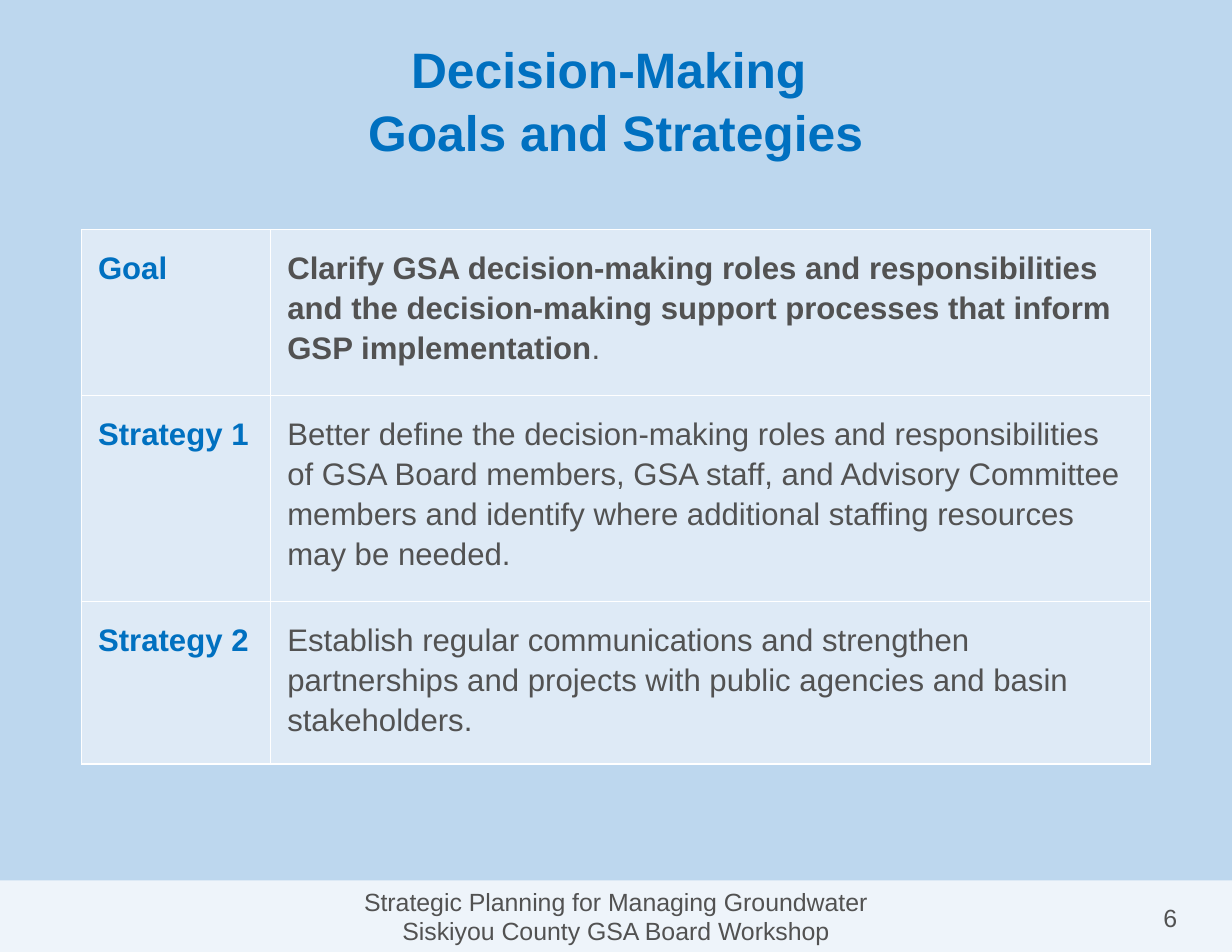
from pptx import Presentation, util as u
from pptx.dml.color import RGBColor
from pptx.enum import shapes, text
from pptx.oxml import parse_xml
from pptx.oxml.ns import nsdecls

COLUMNS, ROWS = 110, 85
BLUE, GREY, PANEL, SKY, WHITE = "0070C0", "525252", "DEEAF6", "BDD7EE", "FFFFFF"

deck = Presentation()
deck.slide_width, deck.slide_height = u.Inches(11), u.Inches(8.5)
unit = deck.slide_width // COLUMNS


def paint(fill, color):
    fill.solid()
    fill.fore_color.rgb = RGBColor.from_string(color)


def write(frame, paragraphs, size, color, align, spacing, frame_format):
    for name, value in {"word_wrap": True, **frame_format}.items():
        setattr(frame, name, value)
    for number, runs in enumerate(paragraphs):
        paragraph = frame.add_paragraph() if number else frame.paragraphs[0]
        for name, value in {"alignment": align, "line_spacing": spacing}.items():
            setattr(paragraph, name, value)
        for words, bold in runs:
            for part, line in enumerate(words.split("\n")):
                if part:
                    paragraph.add_line_break()
                run = paragraph.add_run()
                run.text = line
                font_format = {"name": "Arial", "size": u.Pt(size), "bold": bold}
                for name, value in font_format.items():
                    setattr(run.font, name, value)
                paint(run.font.fill, color)


slide = deck.slides.add_slide(deck.slide_layouts[6])
paint(slide.background.fill, SKY)
center, left = text.PP_ALIGN.CENTER, text.PP_ALIGN.LEFT
middle = {"vertical_anchor": text.MSO_ANCHOR.MIDDLE}

title = slide.shapes.add_textbox(*[int(n * unit) for n in (5.5, 3.4, 99, 10.8)])
write(title.text_frame, [[("Decision-Making \nGoals and Strategies", True)]],
      32, BLUE, center, 1.05, middle)

footer = slide.shapes.add_shape(
    shapes.MSO_SHAPE.RECTANGLE,
    *[int(n * unit) for n in (0, 78.6, COLUMNS, ROWS - 78.6)])
footer.shadow.inherit = False
footer.line.fill.background()
paint(footer.fill, WHITE)
footer.fill._xPr.solidFill[0].append(
    parse_xml(f'<a:alpha {nsdecls("a")} val="75000"/>'))
write(footer.text_frame,
      [[("Strategic Planning for Managing Groundwater", False)],
       [("Siskiyou County GSA Board Workshop", False)]],
      16, GREY, center, 1.0, middle)

page_number = slide.shapes.add_textbox(*[int(n * unit) for n in (101, 80.1, 7, 3.7)])
write(page_number.text_frame, [[("6", False)]], 16, GREY, center, 1.0, {})

plan = [
    ("Goal", 14.8, [
        ("Clarify GSA decision-making roles and responsibilities and the "
         "decision-making support processes that inform GSP implementation", True),
        (".", False)]),
    ("Strategy 1", 18.4, [
        ("Better define the decision-making roles and responsibilities of GSA Board "
         "members, GSA staff, and Advisory Committee members and identify where "
         "additional staffing resources may be needed.", False)]),
    ("Strategy 2", 14.4, [
        ("Establish regular communications and strengthen partnerships and projects "
         "with public agencies and basin stakeholders.", False)]),
]
widths = (16.9, 78.6)
height = sum(rows for _, rows, _ in plan)
goals = slide.shapes.add_table(
    len(plan), len(widths),
    *[int(n * unit) for n in (7.25, 20.5, sum(widths), height)]).table
for column, width in zip(goals.columns, widths):
    column.width = int(width * unit)

inset = int(1.5 * unit)
margins = {f"margin_{side}": inset for side in ("left", "right", "top", "bottom")}
for row, (label, rows, statement) in zip(goals.rows, plan):
    row.height = int(rows * unit)
    contents = (([(label, True)], BLUE), (statement, GREY))
    for cell, (runs, color) in zip(row.cells, contents):
        paint(cell.fill, PANEL)
        for name, value in margins.items():
            setattr(cell, name, value)
        write(cell.text_frame, [runs], 20, color, left, 1.15, {})

deck.save("out.pptx")
